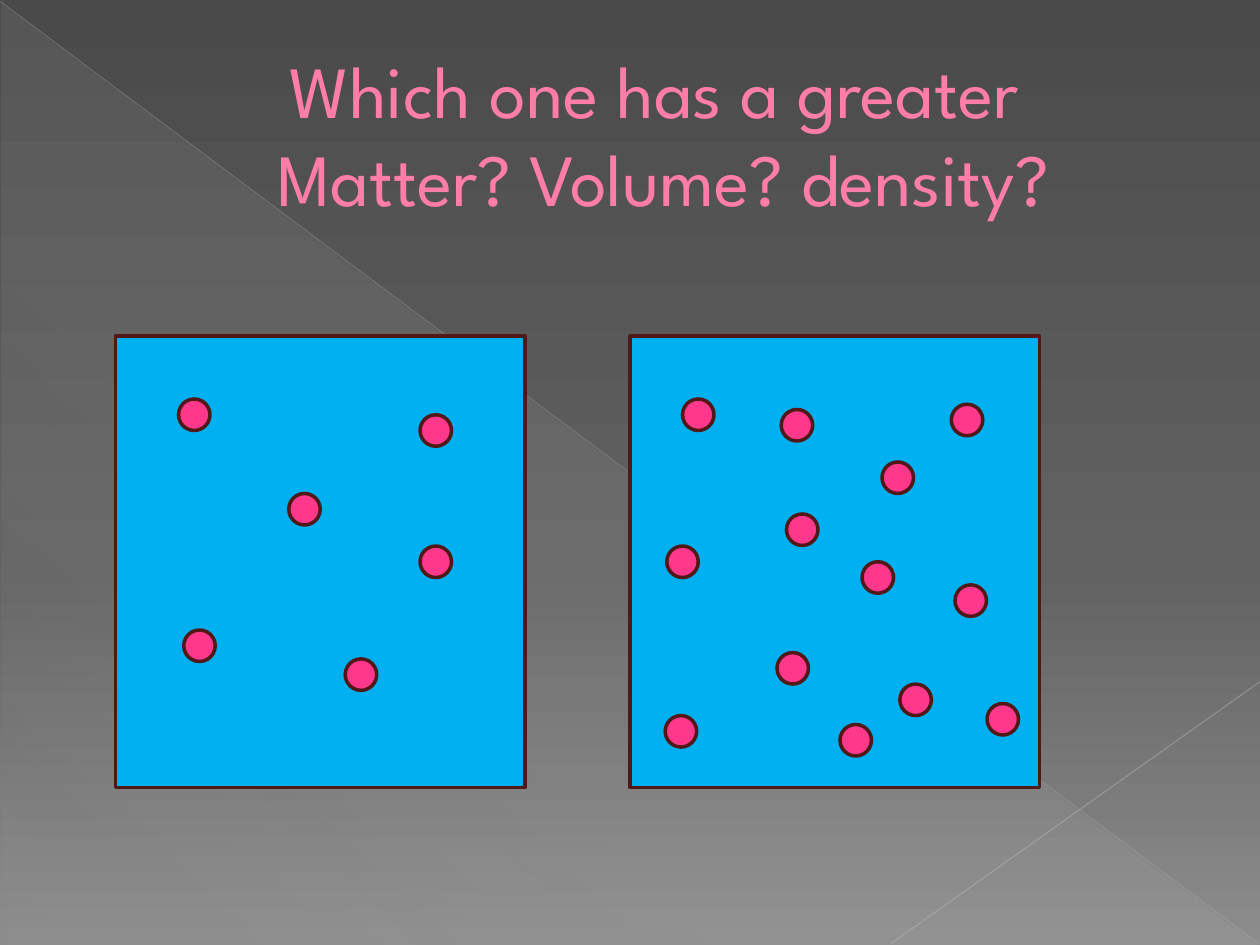
from lxml.etree import SubElement
from pptx import Presentation
from pptx.dml.color import RGBColor
from pptx.enum.shapes import MSO_CONNECTOR, MSO_SHAPE
from pptx.enum.text import MSO_ANCHOR, MSO_AUTO_SIZE, PP_ALIGN
from pptx.oxml.ns import qn
from pptx.util import Inches, Pt


def color(hex_text):
    return RGBColor.from_string(hex_text)


def set_gradient(parent, stops, angle):
    gradient = next(parent.iter(qn("a:gradFill")))
    stop_list = gradient.find(qn("a:gsLst"))
    for old_stop in list(stop_list):
        stop_list.remove(old_stop)
    for position, hex_text, opacity in stops:
        stop = SubElement(stop_list, qn("a:gs"), pos=str(position * 1000))
        tone = SubElement(stop, qn("a:srgbClr"), val=hex_text)
        if opacity < 100:
            SubElement(tone, qn("a:alpha"), val=str(opacity * 1000))
    gradient.find(qn("a:lin")).set("ang", str(angle * 60000))


deck = Presentation()
deck.slide_width = Inches(10)
deck.slide_height = Inches(7.5)
page = deck.slides.add_slide(deck.slide_layouts[5])
column = deck.slide_width / 240
row = deck.slide_height / 180

page.background.fill.gradient()
set_gradient(page._element, [(0, "4A4A4A", 100), (60, "626262", 100), (100, "8C8C8C", 100)], 90)

corner = page.shapes.add_shape(
    MSO_SHAPE.RIGHT_TRIANGLE, Inches(0.01), Inches(0.02), Inches(9.98), Inches(7.48)
)
corner.shadow.inherit = False
corner.line.fill.background()
corner.fill.gradient()
set_gradient(corner._element, [(0, "D2D2D2", 10), (70, "D2D2D2", 8), (100, "D2D2D2", 1)], 133)

for start, end, hex_text, width, opacity in [
    ((0, 0.01), (9.99, 7.49), "BFBFBF", 0.39, 35),
    ((10, 5.41), (7.07, 7.49), "C6C6C6", 0.47, 45),
]:
    ray = page.shapes.add_connector(
        MSO_CONNECTOR.STRAIGHT, *[Inches(length) for length in start + end]
    )
    ray.line.color.rgb = color(hex_text)
    ray.line.width = Pt(width)
    tone = next(ray._element.spPr.iter(qn("a:srgbClr")))
    SubElement(tone, qn("a:alpha"), val=str(opacity * 1000))
    SubElement(ray._element.spPr, qn("a:effectLst"))

title = page.shapes.title
page.shapes._spTree.append(title._element)
title.left, title.top = Inches(0.5), Inches(0.29)
title.width, title.height = Inches(9), Inches(1.53)
frame = title.text_frame
frame.word_wrap = True
frame.auto_size = MSO_AUTO_SIZE.NONE
frame.vertical_anchor = MSO_ANCHOR.MIDDLE
para = frame.paragraphs[0]
para.alignment = PP_ALIGN.CENTER
para._p.get_or_add_pPr().set("marL", str(Inches(0.53)))
para._p.get_or_add_pPr().set("indent", "0")
for number, words in enumerate(["Which one has a greater ", "Matter? Volume? density?"]):
    if number:
        para.add_line_break()
    span = para.add_run()
    span.text = words
    span.font.name = "League Spartan"
    span.font.size = Pt(42)
    span.font.color.rgb = color("FF7DA7")
    outline = SubElement(span.font._element, qn("a:ln"), w=str(Pt(0.5)))
    SubElement(SubElement(outline, qn("a:solidFill")), qn("a:srgbClr"), val="B12761")
    span.font._element.insert(0, outline)

box_top, box_columns, box_rows, dot_size = 64, 78, 86, 6
left_dots = [(12, 12), (13, 56), (33, 30), (58, 40), (58, 15), (43.75, 61.5)]
right_dots = [
    (40, 74), (68, 70), (28.8, 14), (61.2, 13), (44.2, 43), (6.7, 72.3), (51.4, 66.3),
    (61.9, 47.4), (29.8, 33.9), (28, 60.3), (7, 40), (48, 24), (10, 12),
]

for box_left, dots in [(22, left_dots), (120, right_dots)]:
    parts = [(MSO_SHAPE.RECTANGLE, 0, 0, box_columns, box_rows, "00B0F0")]
    for across, down in dots:
        parts.append(
            (MSO_SHAPE.FLOWCHART_CONNECTOR, across, down, dot_size, dot_size, "FF388C")
        )
    for kind, across, down, wide, high, hex_text in parts:
        shape = page.shapes.add_shape(
            kind,
            int((box_left + across) * column),
            int((box_top + down) * row),
            int(wide * column),
            int(high * row),
        )
        shape.shadow.inherit = False
        shape.fill.solid()
        shape.fill.fore_color.rgb = color(hex_text)
        shape.line.color.rgb = color("511818")
        shape.line.width = Pt(2)

deck.save("out.pptx")
